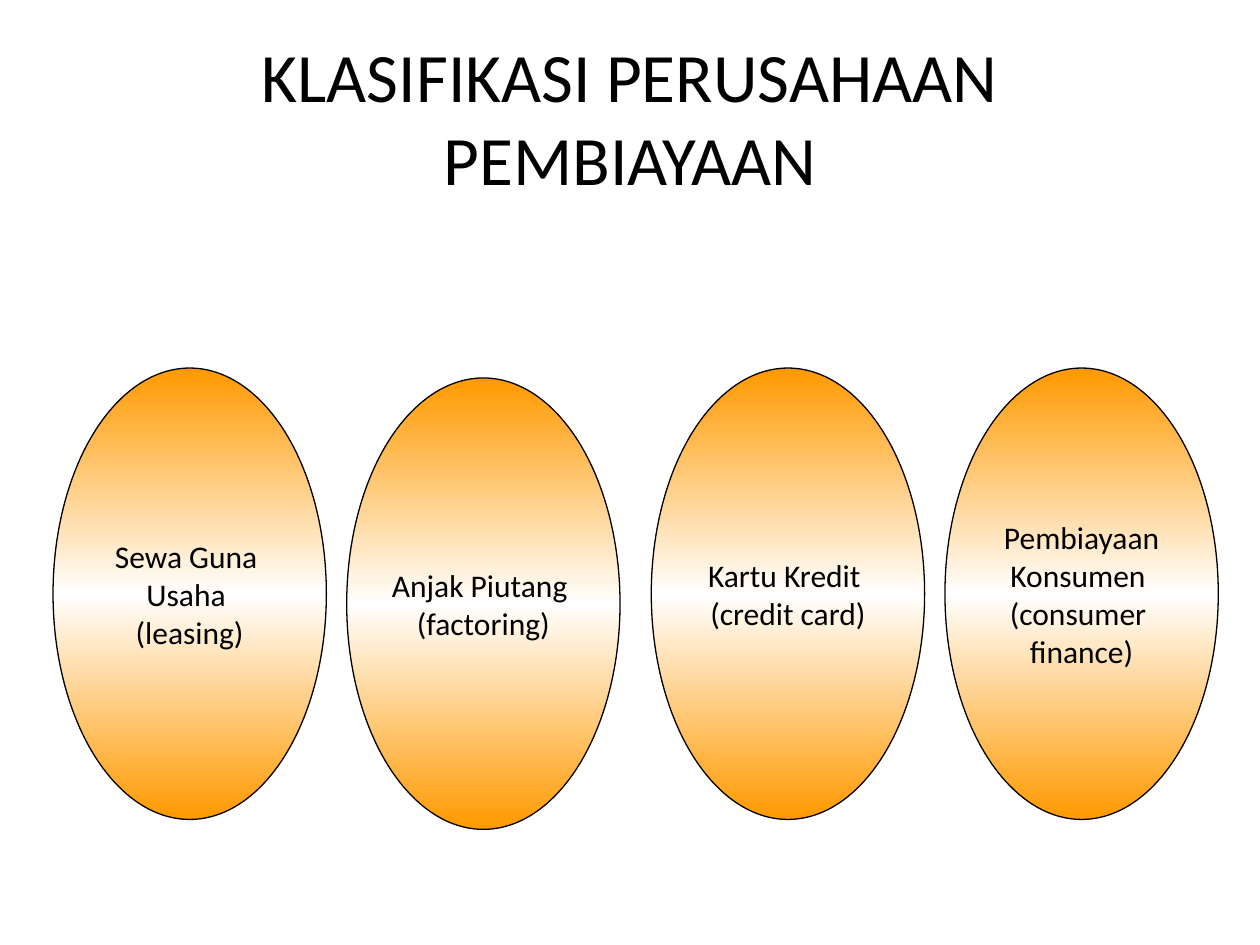
from copy import deepcopy

from pptx import Presentation
from pptx import util as u
from pptx.dml.color import RGBColor
from pptx.enum import shapes, text
from pptx.oxml.ns import qn

BLACK = RGBColor(0, 0, 0)
WHITE = RGBColor(255, 255, 255)
ORANGE = RGBColor(255, 153, 0)

WIDTH, HEIGHT = 5.51, 9.1
TOP, LOW = 7.42, 7.62
OVALS = [
    (1.07, TOP, "Sewa Guna \nUsaha \n(leasing)"),
    (6.99, LOW, "Anjak Piutang \n(factoring)"),
    (13.13, TOP, "Kartu Kredit \n(credit card)"),
    (19.05, TOP, "Pembiayaan\nKonsumen \n(consumer \nfinance)"),
]


def write(shape, words, size=18, wrap=False, color=BLACK, font="Calibri"):
    frame = shape.text_frame
    frame.word_wrap = wrap
    frame.vertical_anchor = text.MSO_ANCHOR.MIDDLE
    frame.text = words
    for para in frame.paragraphs:
        para.alignment = text.PP_ALIGN.CENTER
        for run in para.runs:
            run.font.size = u.Pt(size)
            run.font.name = font
            run.font.color.rgb = color


def shade(shape, colors):
    fill = shape.fill
    fill.gradient()
    fill.gradient_angle = 270
    stops = shape.element.spPr.find(".//" + qn("a:gsLst"))
    while len(stops) < len(colors):
        stops.append(deepcopy(stops[0]))
    for i, (stop, color) in enumerate(zip(fill.gradient_stops, colors)):
        stop.position = i / (len(colors) - 1)
        stop.color.rgb = color


def title(slide, words):
    box = slide.shapes.add_textbox(u.Cm(1.27), u.Cm(0.76), u.Cm(22.86), u.Cm(3.18))
    write(box, words, size=39.6, wrap=True)


def oval(slide, left, top, words):
    shape = slide.shapes.add_shape(
        shapes.MSO_SHAPE.OVAL, u.Cm(left), u.Cm(top), u.Cm(WIDTH), u.Cm(HEIGHT)
    )
    shape.shadow.inherit = False
    shade(shape, [ORANGE, WHITE, ORANGE])
    shape.line.color.rgb = BLACK
    shape.line.width = u.Pt(0.75)
    write(shape, words)


def main():
    deck = Presentation()
    deck.slide_width, deck.slide_height = u.Cm(25.4), u.Cm(19.05)
    slide = deck.slides.add_slide(deck.slide_layouts[6])
    title(slide, "KLASIFIKASI PERUSAHAAN PEMBIAYAAN")
    for left, top, words in OVALS:
        oval(slide, left, top, words)
    deck.save("out.pptx")


if __name__ == "__main__":
    main()
